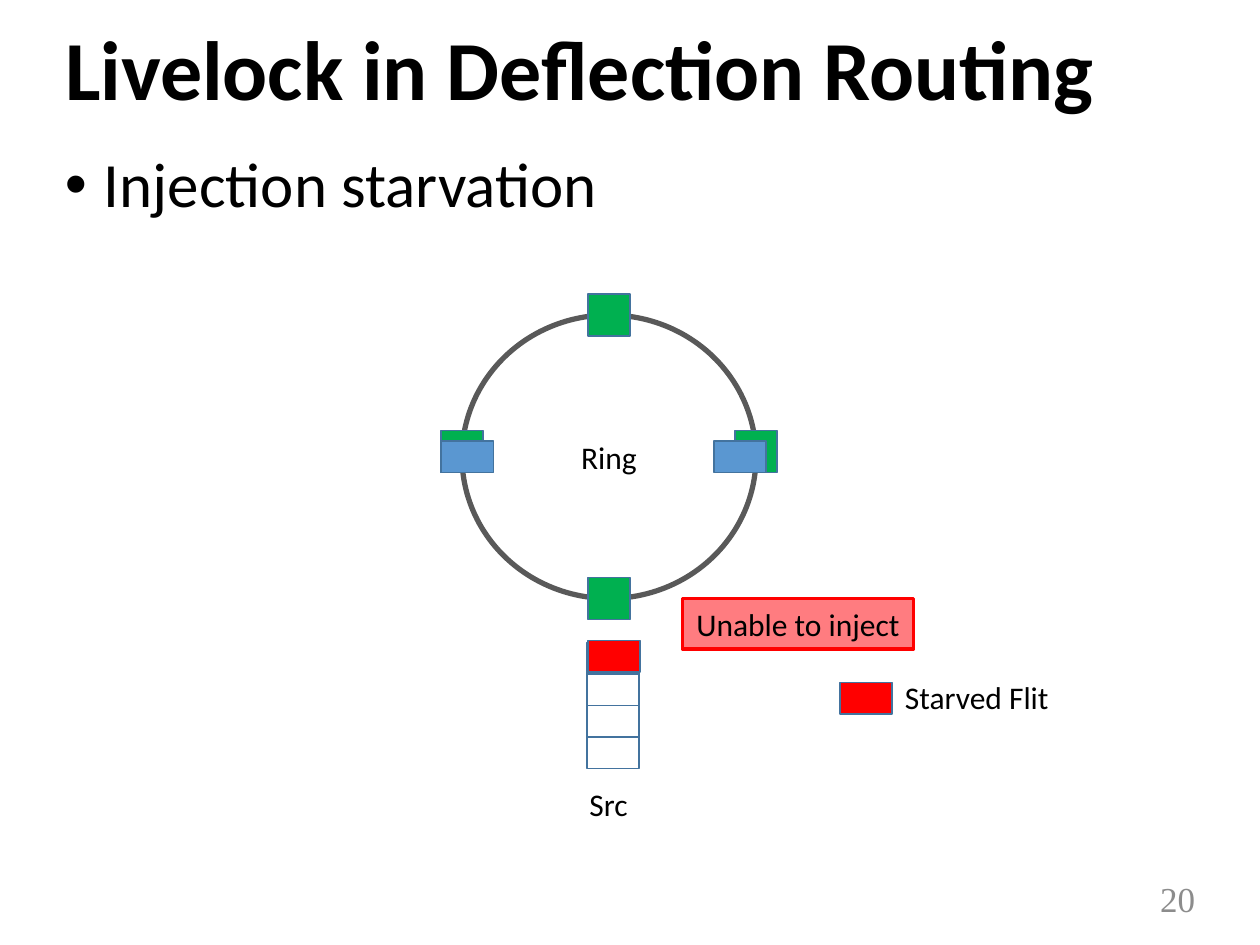
from dataclasses import dataclass

from lxml import etree
from pptx import Presentation
from pptx.dml.color import RGBColor
from pptx.enum.shapes import MSO_SHAPE
from pptx.enum.text import MSO_ANCHOR, PP_ALIGN
from pptx.oxml.ns import qn
from pptx.util import Emu, Inches, Pt

RECTANGLE, OVAL = MSO_SHAPE.RECTANGLE, MSO_SHAPE.OVAL
TOP, MIDDLE = MSO_ANCHOR.TOP, MSO_ANCHOR.MIDDLE
LEFT, CENTER, RIGHT = PP_ALIGN.LEFT, PP_ALIGN.CENTER, PP_ALIGN.RIGHT

UNIT = Inches(1) // 12  # the grid has 120 columns and 90 rows
BLACK, GREY, RED, GREEN = "000000", "8C8C8C", "FF0000", "00B050"
PINK, BLUE, OUTLINE, RING_LINE = "FF7C80", "5A97D1", "43739E", "595959"
FLIT_WIDTH, FLIT_HEIGHT = 5, 3
ROUTER_SIZE = 4
QUEUE_SLOTS = 4


@dataclass
class Box:
    """A place on the grid, in columns and rows."""
    column: float
    row: float
    width: float
    height: float

    def lengths(self) -> list[Emu]:
        return [Emu(round(value * UNIT)) for value in
                (self.column, self.row, self.width, self.height)]


@dataclass
class Style:
    size: int = 18
    color: str = BLACK
    font: str = "Calibri"
    bold: bool = False
    align: PP_ALIGN = CENTER
    anchor: MSO_ANCHOR = TOP
    wrap: bool = False


def rgb(color: str) -> RGBColor:
    return RGBColor.from_string(color)


def write(shape, text: str, style: Style):
    frame = shape.text_frame
    frame.text = text
    frame.word_wrap = style.wrap
    frame.vertical_anchor = style.anchor
    paragraph = frame.paragraphs[0]
    paragraph.alignment = style.align
    font = paragraph.runs[0].font
    font.size, font.name, font.bold = Pt(style.size), style.font, style.bold
    font.color.rgb = rgb(style.color)
    return paragraph


def add_text(slide, box: Box, text: str, style: Style):
    return write(slide.shapes.add_textbox(*box.lengths()), text, style)


def add_figure(slide, box: Box, fill: str | None = None, line: str = OUTLINE,
               line_width: float = 1, kind: MSO_SHAPE = RECTANGLE):
    shape = slide.shapes.add_shape(kind, *box.lengths())
    shape.shadow.inherit = False
    if fill:
        shape.fill.solid()
        shape.fill.fore_color.rgb = rgb(fill)
    else:
        shape.fill.background()
    shape.line.color.rgb = rgb(line)
    shape.line.width = Pt(line_width)
    return shape


def add_flit(slide, column: float, row: float, fill: str | None = None) -> None:
    add_figure(slide, Box(column, row, FLIT_WIDTH, FLIT_HEIGHT), fill)


def add_bullet(paragraph, indent: float) -> None:
    properties = paragraph._p.get_or_add_pPr()
    properties.set("marL", str(Inches(indent)))
    properties.set("indent", str(-Inches(indent)))
    etree.SubElement(properties, qn("a:buFont"), typeface="Arial")
    etree.SubElement(properties, qn("a:buChar"), char="•")


def main() -> None:
    presentation = Presentation()
    presentation.slide_width, presentation.slide_height = Inches(10), Inches(7.5)
    slide = presentation.slides.add_slide(presentation.slide_layouts[5])

    # Title and bullet
    title = slide.shapes.title
    title.left, title.top, title.width, title.height = Box(5, 2, 110, 10).lengths()
    heading = write(title, "Livelock in Deflection Routing",
                    Style(48, bold=True, align=LEFT, anchor=MIDDLE, wrap=True))
    heading.line_spacing = 0.9
    bullet = add_text(slide, Box(5, 14, 110, 74), "Injection starvation",
                      Style(36, align=LEFT, wrap=True))
    bullet.line_spacing, bullet.space_before = 0.9, Pt(10)
    add_bullet(bullet, 0.31)

    # Ring with its four routers
    ring = add_figure(slide, Box(44, 30, 28, 27), None, RING_LINE, 3, OVAL)
    write(ring, "Ring", Style(anchor=MIDDLE, wrap=True))
    for column, row in ((56, 28), (56, 55), (42, 41), (70, 41)):
        add_figure(slide, Box(column, row, ROUTER_SIZE, ROUTER_SIZE), GREEN)

    # Flits travelling on the ring
    for column in (42, 68):
        add_flit(slide, column, 42, BLUE)

    # Source queue with the starved flit at its head
    for slot in range(QUEUE_SLOTS):
        add_flit(slide, 55.9, 61.2 + slot * FLIT_HEIGHT)
    add_flit(slide, 56, 61, RED)
    add_text(slide, Box(54.9, 74.2, 6.1, 4.8), "Src", Style())

    # Warning and legend
    warning = add_figure(slide, Box(65, 57, 22, 4.8), PINK, RED, 2)
    write(warning, "Unable to inject", Style())
    add_flit(slide, 80, 65, RED)
    add_text(slide, Box(85, 64, 16.2, 4.8), "Starved Flit", Style(align=LEFT))

    # Slide number
    add_text(slide, Box(106, 83.2, 9, 4.8), "20",
             Style(20, GREY, "Times New Roman", align=RIGHT, anchor=MIDDLE, wrap=True))

    presentation.save("out.pptx")


if __name__ == "__main__":
    main()
